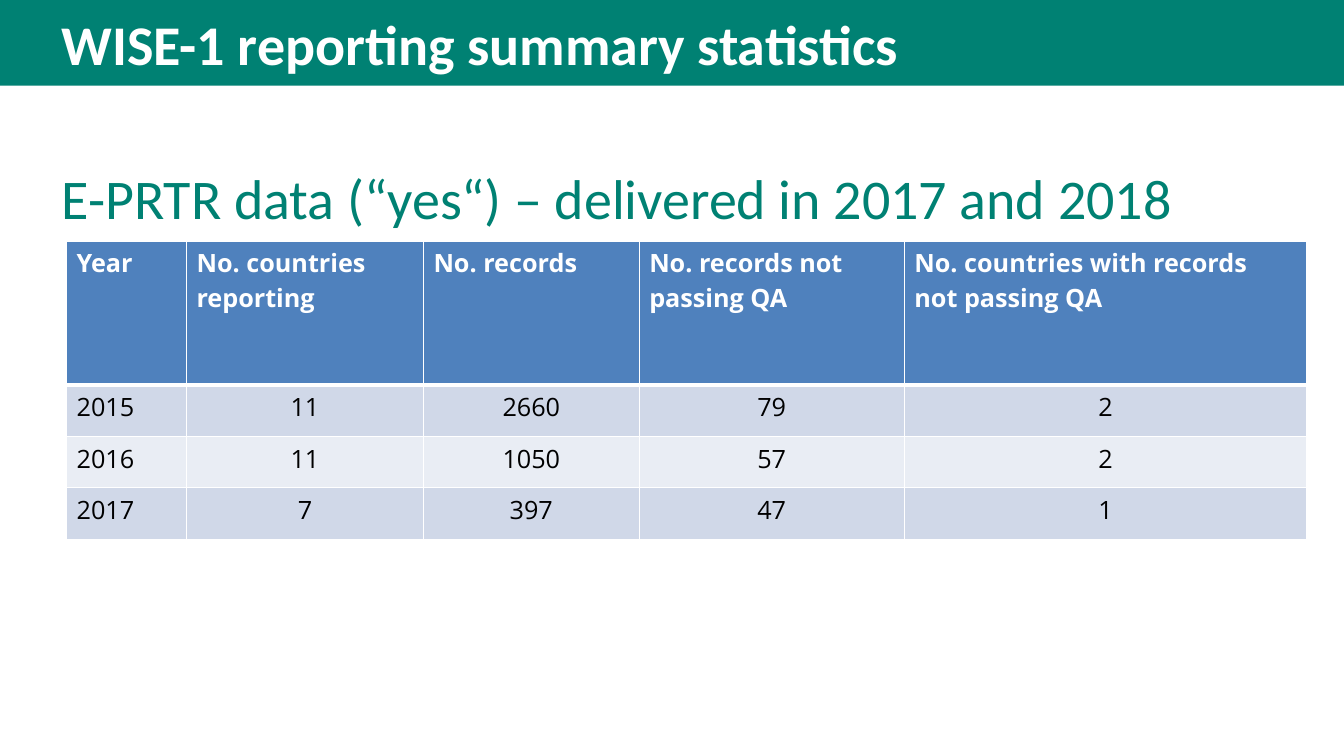
from lxml import etree
from pptx import Presentation
from pptx.dml.color import RGBColor
from pptx.enum.shapes import MSO_SHAPE
from pptx.enum.text import MSO_ANCHOR, MSO_AUTO_SIZE, PP_ALIGN
from pptx.oxml.ns import qn
from pptx.util import Inches, Pt

RECT = MSO_SHAPE.RECTANGLE
TOP = MSO_ANCHOR.TOP
NO_FIT = MSO_AUTO_SIZE.NONE
LEFT, CENTER = PP_ALIGN.LEFT, PP_ALIGN.CENTER

# Content
TITLE = "WISE-1 reporting summary statistics"
SUBTITLE = "E-PRTR data (“yes“) – delivered in 2017 and 2018"
ROWS = [
    ("Year", "No. countries reporting", "No. records",
     "No. records not passing QA", "No. countries with records not passing QA"),
    ("2015", "11", "2660", "79", "2"),
    ("2016", "11", "1050", "57", "2"),
    ("2017", "7", "397", "47", "1"),
]

# Layout in inches
WIDTH, HEIGHT = 13.33, 7.5
BAR_HEIGHT = 0.85
TEXT_LEFT, TEXT_WIDTH = 0.51, 12.3
TABLE_LEFT, TABLE_TOP = 0.66, 2.39
COLUMNS = [1.19, 2.35, 2.14, 2.63, 3.99]
HEADER_ROW, DATA_ROW = 1.43, 0.51

GREEN, WHITE, BLACK = "008173", "FFFFFF", "000000"
HEADER_FILL, BANDS = "4F81BD", ("D0D8E8", "E9EDF4")


def color(value):
    return RGBColor.from_string(value)


def add_run(p, text, font, size, fill, bold=False):
    r = p.add_run()
    r.text = text
    r.font.name = font
    r.font.size = Pt(size)
    r.font.bold = bold
    r.font.color.rgb = color(fill)


def fill_placeholder(sp, top, height, text, fill, bold):
    sp.left, sp.top = Inches(TEXT_LEFT), Inches(top)
    sp.width, sp.height = Inches(TEXT_WIDTH), Inches(height)
    tf = sp.text_frame
    tf.word_wrap = True
    tf.auto_size = NO_FIT
    tf.vertical_anchor = TOP
    p = tf.paragraphs[0]
    pPr = p._p.get_or_add_pPr()
    pPr.set("marL", "0")
    pPr.set("indent", "0")
    etree.SubElement(pPr, qn("a:buNone"))
    p.alignment = LEFT
    p.space_before = Pt(0)
    add_run(p, text, "Calibri", 40, fill, bold)


def set_borders(cell, bottom):
    tcPr = cell._tc.get_or_add_tcPr()
    for i, (side, width) in enumerate(
            (("lnL", 1), ("lnR", 1), ("lnT", 1), ("lnB", bottom))):
        ln = etree.Element(qn("a:" + side), w=str(Pt(width)))
        solid = etree.SubElement(ln, qn("a:solidFill"))
        etree.SubElement(solid, qn("a:srgbClr"), val=WHITE)
        tcPr.insert(i, ln)


prs = Presentation()
prs.slide_width, prs.slide_height = Inches(WIDTH), Inches(HEIGHT)
slide = prs.slides.add_slide(prs.slide_layouts[1])
title, body = slide.placeholders

# Header bar, behind the title
bar = slide.shapes.add_shape(RECT, 0, 0, prs.slide_width, Inches(BAR_HEIGHT))
bar.shadow.inherit = False
bar.fill.solid()
bar.fill.fore_color.rgb = color(GREEN)
bar.line.fill.background()
title._element.addprevious(bar._element)

# Title and subtitle
fill_placeholder(title, 0.04, 0.74, TITLE, WHITE, True)
fill_placeholder(body, 1.57, 5.57, SUBTITLE, GREEN, False)

# Statistics table
heights = [HEADER_ROW] + [DATA_ROW] * (len(ROWS) - 1)
table = slide.shapes.add_table(
    len(ROWS), len(COLUMNS), Inches(TABLE_LEFT), Inches(TABLE_TOP),
    Inches(sum(COLUMNS)), Inches(sum(heights))).table
for column, width in zip(table.columns, COLUMNS):
    column.width = Inches(width)
for i, (row, height) in enumerate(zip(ROWS, heights)):
    table.rows[i].height = Inches(height)
    header = i == 0
    for j, text in enumerate(row):
        cell = table.cell(i, j)
        cell.fill.solid()
        cell.fill.fore_color.rgb = color(HEADER_FILL if header else BANDS[(i - 1) % 2])
        set_borders(cell, 3 if header else 1)
        p = cell.text_frame.paragraphs[0]
        p.alignment = LEFT if header or j == 0 else CENTER
        add_run(p, text, "Open Sans", 18, WHITE if header else BLACK, header)

prs.save("out.pptx")
